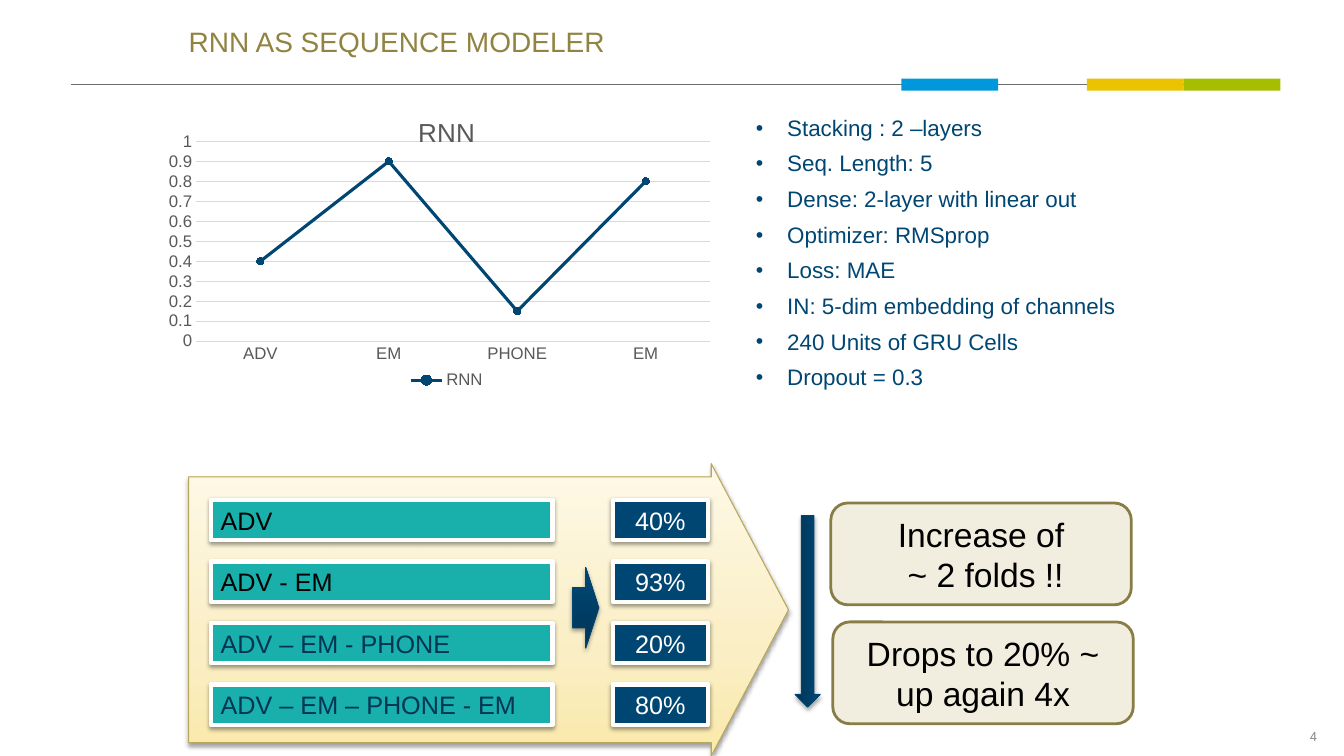
from dataclasses import dataclass

from lxml.etree import SubElement
from pptx import Presentation
from pptx.chart.data import CategoryChartData
from pptx.dml.color import RGBColor
from pptx.enum.chart import XL_CHART_TYPE, XL_LEGEND_POSITION, XL_MARKER_STYLE, XL_TICK_MARK
from pptx.enum.shapes import MSO_CONNECTOR, MSO_SHAPE
from pptx.enum.text import MSO_ANCHOR, PP_ALIGN
from pptx.oxml.ns import qn
from pptx.util import Inches, Pt

TITLE = "RNN AS SEQUENCE MODELER"
PAGE_NUMBER = "4"
SETTINGS = [
    "Stacking : 2 –layers",
    "Seq. Length: 5",
    "Dense: 2-layer with linear out",
    "Optimizer: RMSprop",
    "Loss: MAE",
    "IN: 5-dim embedding of channels",
    "240 Units of GRU Cells",
    "Dropout = 0.3",
]
SERIES = "RNN"
CHANNELS = ["ADV", "EM", "PHONE", "EM"]
SCORES = [0.4, 0.9, 0.15, 0.8]
SEQUENCES = [
    ("ADV", "40%", "000000"),
    ("ADV - EM", "93%", "000000"),
    ("ADV – EM - PHONE", "20%", "003556"),
    ("ADV – EM – PHONE - EM", "80%", "003556"),
]
FINDINGS = [
    (["Increase of", " ~ 2 folds !!"], (8.24, 4.99)),
    (["Drops to 20% ~ up again 4x"], (8.26, 6.17)),
]
HEADER_BARS = [("0098DB", 8.94), ("EBC300", 10.78), ("A6BE00", 11.74)]


@dataclass(frozen=True)
class Theme:
    """Colours, fonts and type sizes of the slide."""
    font: str = "Arial"
    number_font: str = "Roboto"
    title: str = "918340"
    navy: str = "004673"
    teal: str = "19AFAA"
    white: str = "FFFFFF"
    black: str = "000000"
    rule: str = "6C6F70"
    number: str = "8C8C8C"
    card: str = "F1EEDF"
    card_line: str = "887D46"
    chart_text: str = "595959"
    grid: str = "D9D9D9"
    sand_line: str = "B6A75A"
    deep_line: str = "004470"
    sand: tuple = ((0, "FAE9AA"), (35, "FAEEC4"), (100, "FEF9E7"))
    deep: tuple = ((0, "003456"), (80, "00446F"), (100, "004470"))
    title_size: float = 20
    bullet_size: float = 16
    row_size: float = 18
    card_size: float = 24
    axis_size: float = 12
    chart_title_size: float = 18.6
    number_size: float = 9


THEME = Theme()


def colour(value):
    """Turn a hex string into a colour."""
    return RGBColor.from_string(value)


def assign(target, values):
    """Set every attribute named in a dict."""
    for name, value in values.items():
        setattr(target, name, value)


def style_font(font, size, tint, name=THEME.font):
    """Give a font its face, size and colour."""
    assign(font, {"name": name, "size": Pt(size), "bold": False})
    font.color.rgb = colour(tint)


def style_line(line, tint, width):
    """Give a line its colour and width."""
    line.color.rgb = colour(tint)
    line.width = Pt(width)


def write(box, lines, size, tint, align=PP_ALIGN.LEFT, name=THEME.font, **spacing):
    """Fill a shape with one paragraph per line."""
    frame = box.text_frame
    frame.word_wrap = True
    for index, line in enumerate(lines):
        para = frame.add_paragraph() if index else frame.paragraphs[0]
        assign(para, {"alignment": align, **spacing})
        span = para.add_run()
        span.text = line
        style_font(span.font, size, tint, name)
    return frame


def add_block(page, kind, place, fill, line=None, shadow=None):
    """Add a preset shape with a solid or gradient fill."""
    block = page.shapes.add_shape(kind, *map(Inches, place))
    block.shadow.inherit = False
    if isinstance(fill, str):
        block.fill.solid()
        block.fill.fore_color.rgb = colour(fill)
    else:
        block.fill.gradient()
        block.fill.gradient_angle = 90
        stops = block._element.spPr.find(qn("a:gradFill")).find(qn("a:gsLst"))
        stops.clear()
        for position, tint in fill:
            stop = SubElement(stops, qn("a:gs"), pos=str(position * 1000))
            SubElement(stop, qn("a:srgbClr"), val=tint)
    if line:
        style_line(block.line, *line)
    else:
        block.line.fill.background()
    if shadow:
        effects = block._element.spPr.find(qn("a:effectLst"))
        outer = SubElement(effects, qn("a:outerShdw"), blurRad=str(Pt(3.1)),
                           dist=str(Pt(1.7)), dir="5400000", rotWithShape="0")
        tint = SubElement(outer, qn("a:srgbClr"), val=THEME.black)
        SubElement(tint, qn("a:alpha"), val=str(shadow * 1000))
    return block


def add_header(page):
    """Place the title, the rule with its bars and the page number."""
    title = page.shapes.title
    assign(title, dict(zip(("left", "top", "width", "height"), map(Inches, (1.87, 0.26, 8.5, 0.33)))))
    frame = write(title, [TITLE], THEME.title_size, THEME.title, line_spacing=0.97)
    assign(frame, {f"margin_{side}": 0 for side in ("left", "top", "right", "bottom")})
    frame.vertical_anchor = MSO_ANCHOR.MIDDLE
    rule = page.shapes.add_connector(MSO_CONNECTOR.STRAIGHT, *map(Inches, (0.7, 0.84, 12.67, 0.84)))
    style_line(rule.line, THEME.rule, 1)
    SubElement(rule._element.spPr, qn("a:effectLst"))
    for tint, left in HEADER_BARS:
        add_block(page, MSO_SHAPE.RECTANGLE, (left, 0.78, 0.96, 0.12), tint)
    number = page.shapes.add_textbox(*map(Inches, (10.16, 7.16, 3, 0.3)))
    frame = write(number, [PAGE_NUMBER], THEME.number_size, THEME.number, PP_ALIGN.RIGHT, THEME.number_font)
    frame.vertical_anchor = MSO_ANCHOR.MIDDLE


def add_score_chart(page):
    """Plot the score of each channel in the sequence."""
    data = CategoryChartData()
    data.categories = CHANNELS
    data.add_series(SERIES, SCORES)
    place = map(Inches, (1.67, 0.98, 5.52, 2.92))
    chart = page.shapes.add_chart(XL_CHART_TYPE.LINE_MARKERS, *place, data).chart
    style_font(chart.font, THEME.axis_size, THEME.chart_text)
    assign(chart, {"has_title": True, "has_legend": True})
    chart.chart_title.text_frame.text = SERIES
    span = chart.chart_title.text_frame.paragraphs[0].runs[0]
    style_font(span.font, THEME.chart_title_size, THEME.chart_text)
    assign(chart.legend, {"position": XL_LEGEND_POSITION.BOTTOM, "include_in_layout": False})
    for axis in (chart.category_axis, chart.value_axis):
        assign(axis, {"major_tick_mark": XL_TICK_MARK.NONE, "minor_tick_mark": XL_TICK_MARK.NONE})
        style_font(axis.tick_labels.font, THEME.axis_size, THEME.chart_text)
    style_line(chart.category_axis.format.line, THEME.grid, 0.75)
    assign(chart.value_axis, {"minimum_scale": 0, "maximum_scale": 1, "major_unit": 0.1})
    chart.value_axis.format.line.fill.background()
    style_line(chart.value_axis.major_gridlines.format.line, THEME.grid, 0.75)
    chart.plots[0].vary_by_categories = False
    series = chart.plots[0].series[0]
    series.smooth = False
    style_line(series.format.line, THEME.navy, 2.25)
    assign(series.marker, {"style": XL_MARKER_STYLE.CIRCLE, "size": 5})
    series.marker.format.fill.solid()
    series.marker.format.fill.fore_color.rgb = colour(THEME.navy)
    style_line(series.marker.format.line, THEME.navy, 0.75)
    area = chart._chartSpace.chart.plotArea
    for layout in area.findall(qn("c:layout")):
        area.remove(layout)
    layout = SubElement(area, qn("c:layout"))
    area.insert(0, layout)
    manual = SubElement(layout, qn("c:manualLayout"))
    values = {"layoutTarget": "inner", "xMode": "edge", "yMode": "edge",
              "x": "0.05", "y": "0.145", "w": "0.923", "h": "0.679"}
    for name, value in values.items():
        SubElement(manual, qn(f"c:{name}"), val=value)


def add_settings(page):
    """List the model settings as bullets."""
    box = page.shapes.add_textbox(*map(Inches, (7.4, 1.11, 4.07, 2.9)))
    frame = write(box, SETTINGS, THEME.bullet_size, THEME.navy,
                  line_spacing=0.91, space_before=Pt(7.1), space_after=Pt(0.9))
    for para in frame.paragraphs:
        props = para._p.get_or_add_pPr()
        props.set("marL", str(Inches(0.31)))
        props.set("indent", str(Inches(-0.31)))
        SubElement(props, qn("a:buSzPct"), val="95000")
        SubElement(props, qn("a:buFont"), typeface=THEME.font)
        SubElement(props, qn("a:buChar"), char="•")


def add_flow(page):
    """Draw the sequences, their scores and the findings."""
    arrow = add_block(page, MSO_SHAPE.RIGHT_ARROW, (1.87, 4.6, 5.95, 2.9), THEME.sand, (THEME.sand_line, 0.75), 38)
    arrow.adjustments[0], arrow.adjustments[1] = 0.909, 0.264
    for row, (label, share, tint) in enumerate(SEQUENCES):
        top = 4.96 + 0.61 * row
        cells = [(label, 2.09, 3.39, THEME.teal, tint, PP_ALIGN.LEFT),
                 (share, 6.08, 0.94, THEME.navy, THEME.white, PP_ALIGN.CENTER)]
        for text, left, width, fill, ink, align in cells:
            cell = add_block(page, MSO_SHAPE.RECTANGLE, (left, top, width, 0.4), fill, (THEME.white, 3), 38)
            write(cell, [text], THEME.row_size, ink, align)
    for place, turn in [((5.68, 5.63, 0.26, 0.8), 0), ((7.06, 5.94, 1.9, 0.25), 90)]:
        pointer = add_block(page, MSO_SHAPE.RIGHT_ARROW, place, THEME.deep, (THEME.deep_line, 0.75), 35)
        pointer.rotation = turn
    for lines, corner in FINDINGS:
        card = add_block(page, MSO_SHAPE.ROUNDED_RECTANGLE, (*corner, 2.98, 1.01), THEME.card, (THEME.card_line, 2))
        write(card, lines, THEME.card_size, THEME.black, PP_ALIGN.CENTER)


def main():
    """Build the slide and save it."""
    deck = Presentation()
    assign(deck, {"slide_width": Inches(13.33), "slide_height": Inches(7.5)})
    page = deck.slides.add_slide(deck.slide_layouts[5])
    for add_part in (add_header, add_score_chart, add_settings, add_flow):
        add_part(page)
    deck.save("out.pptx")


if __name__ == "__main__":
    main()
